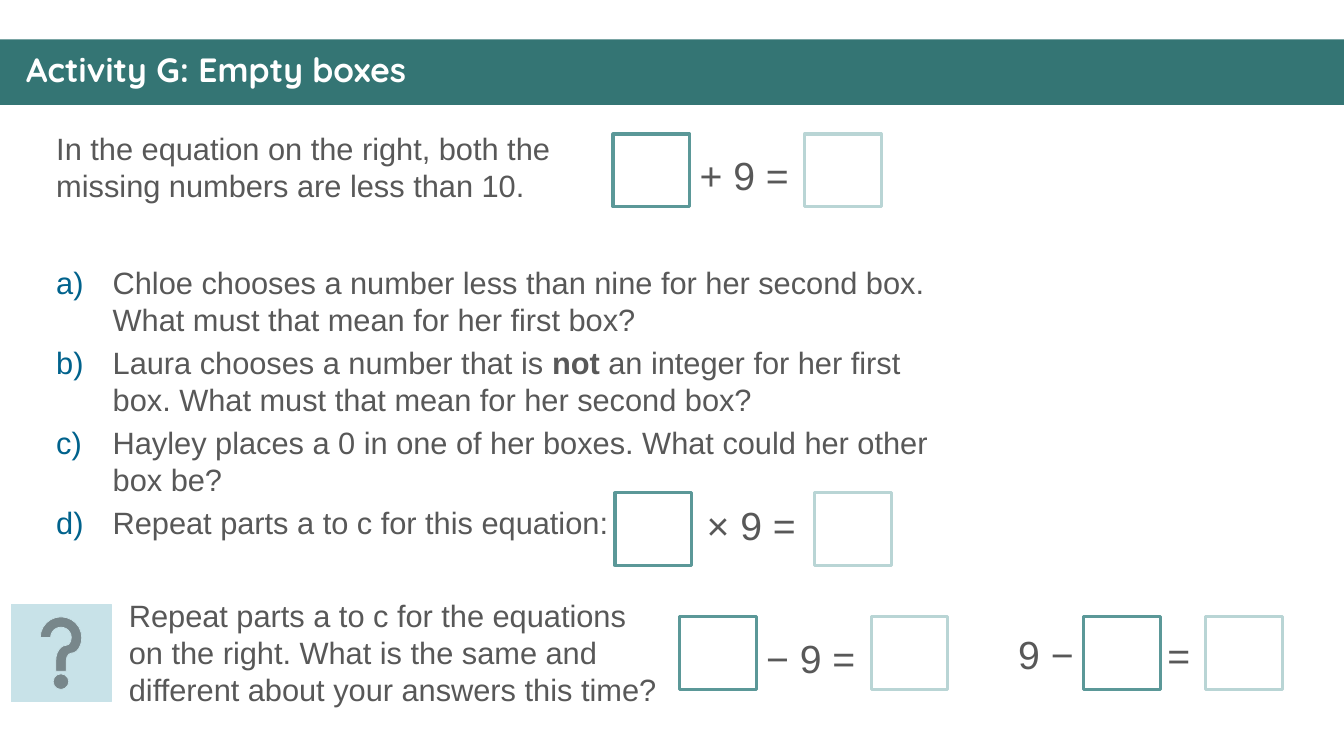
from lxml.etree import SubElement
from pptx import Presentation
from pptx.dml.color import RGBColor
from pptx.enum.shapes import MSO_SHAPE as SHAPE
from pptx.enum.text import MSO_ANCHOR as ANCHOR, MSO_AUTO_SIZE as AUTO, PP_ALIGN as ALIGN
from pptx.oxml.ns import qn
from pptx.util import Inches, Pt

BAND, DARK, LIGHT, HELP = "347574", "5B9898", "B9D5D5", "C8E2E8"
TEXT, LETTER, WHITE = "585858", "00628C", "FFFFFF"


def rgb(value):
    return RGBColor.from_string(value)


class ActivitySlide:
    """Holds the style and the current slide of an activity."""

    body_font, title_font = "Arial", "Quicksand"
    body_size, equation_size = 22, 28
    box_width, box_height = 0.76, 0.72

    def __init__(self, prs):
        self.s = prs.slides.add_slide(prs.slide_layouts[5])

    def run(self, p, text, size, color=TEXT, font=body_font, bold=False):
        r = p.add_run()
        r.text = text
        r.font.size = Pt(size)
        r.font.name = font
        r.font.bold = bold
        r.font.color.rgb = rgb(color)

    def shape(self, kind, x, y, w, h, fill=None, line=None, weight=0.5):
        sp = self.s.shapes.add_shape(kind, Inches(x), Inches(y), Inches(w), Inches(h))
        sp.shadow.inherit = False
        if fill:
            sp.fill.solid()
            sp.fill.fore_color.rgb = rgb(fill)
        else:
            sp.fill.background()
        if line:
            sp.line.color.rgb = rgb(line)
            sp.line.width = Pt(weight)
        else:
            sp.line.fill.background()
        return sp

    def title(self, text):
        sp = self.s.shapes.title
        sp.left, sp.top, sp.width, sp.height = map(Inches, (0.16, 0.48, 13.04, 0.47))
        band = self.shape(SHAPE.RECTANGLE, 0, 0.39, 13.33, 0.65, BAND)
        sp.element.addprevious(band.element)
        tf = sp.text_frame
        tf.auto_size = AUTO.NONE
        tf.word_wrap = True
        tf.vertical_anchor = ANCHOR.MIDDLE
        p = tf.paragraphs[0]
        p.alignment = ALIGN.LEFT
        p.line_spacing = 0.9
        self.run(p, text, 24, WHITE, self.title_font, True)

    def text(self, x, y, w, h, paragraphs, size=body_size, lettered=False):
        sp = self.s.shapes.add_textbox(Inches(x), Inches(y), Inches(w), Inches(h))
        tf = sp.text_frame
        tf.word_wrap = True
        for i, runs in enumerate(paragraphs):
            p = tf.add_paragraph() if i else tf.paragraphs[0]
            p.space_before = Pt(size * 0.2)
            if lettered:
                self.letter(p)
            for text, bold in runs:
                self.run(p, text, size, bold=bold)

    def letter(self, p):
        pPr = p._p.get_or_add_pPr()
        pPr.set("marL", str(Inches(0.56)))
        pPr.set("indent", str(Inches(-0.56)))
        color = SubElement(pPr, qn("a:buClr"))
        SubElement(color, qn("a:srgbClr"), val=LETTER)
        SubElement(pPr, qn("a:buFont"), typeface=self.body_font)
        SubElement(pPr, qn("a:buAutoNum"), type="alphaLcParenR")

    def box(self, x, y, color):
        self.shape(SHAPE.RECTANGLE, x, y, self.box_width, self.box_height, line=color, weight=2.25)

    def equation(self, y, first, second, *signs):
        self.box(first, y, DARK)
        self.box(second, y, LIGHT)
        for text, x, top, w in signs:
            self.text(x, top, w, 0.57, [[(text, False)]], self.equation_size)


def main():
    prs = Presentation()
    prs.slide_width, prs.slide_height = Inches(13.33), Inches(7.5)
    slide = ActivitySlide(prs)
    slide.title("Activity G: Empty boxes")
    slide.text(0.46, 2.57, 9.07, 3.36, [
        [("Chloe chooses a number less than nine for her second box. "
          "What must that mean for her first box?", False)],
        [("Laura chooses a number that is ", False), ("not", True),
         (" an integer for her first box. What must that mean for her second box?", False)],
        [("Hayley places a 0 in one of her boxes. What could her other box be?", False)],
        [("Repeat parts a to c for this equation:", False)],
    ], lettered=True)
    slide.text(0.46, 1.24, 5.73, 0.84, [[
        ("In the equation on the right, both the missing numbers are less than 10.", False)]])
    slide.shape(SHAPE.ACTION_BUTTON_HELP, 0.11, 6, 0.99, 0.96, HELP, HELP)
    slide.text(1.18, 5.87, 5.51, 1.21, [[
        ("Repeat parts a to c for the equations on the right. What is the same "
         "and different about your answers this time?", False)]])
    slide.equation(1.33, 6.08, 7.98, ("+ 9 =", 6.84, 1.45, 1.13))
    slide.equation(4.89, 6.1, 8.08, ("× 9 =", 6.91, 4.92, 1.13))
    slide.equation(6.12, 6.74, 8.64, ("− 9 =", 7.5, 6.24, 1.13))
    slide.equation(6.12, 10.75, 11.96, ("9 −", 10, 6.2, 0.75), ("=", 11.48, 6.21, 1.13))
    prs.save("out.pptx")


if __name__ == "__main__":
    main()
